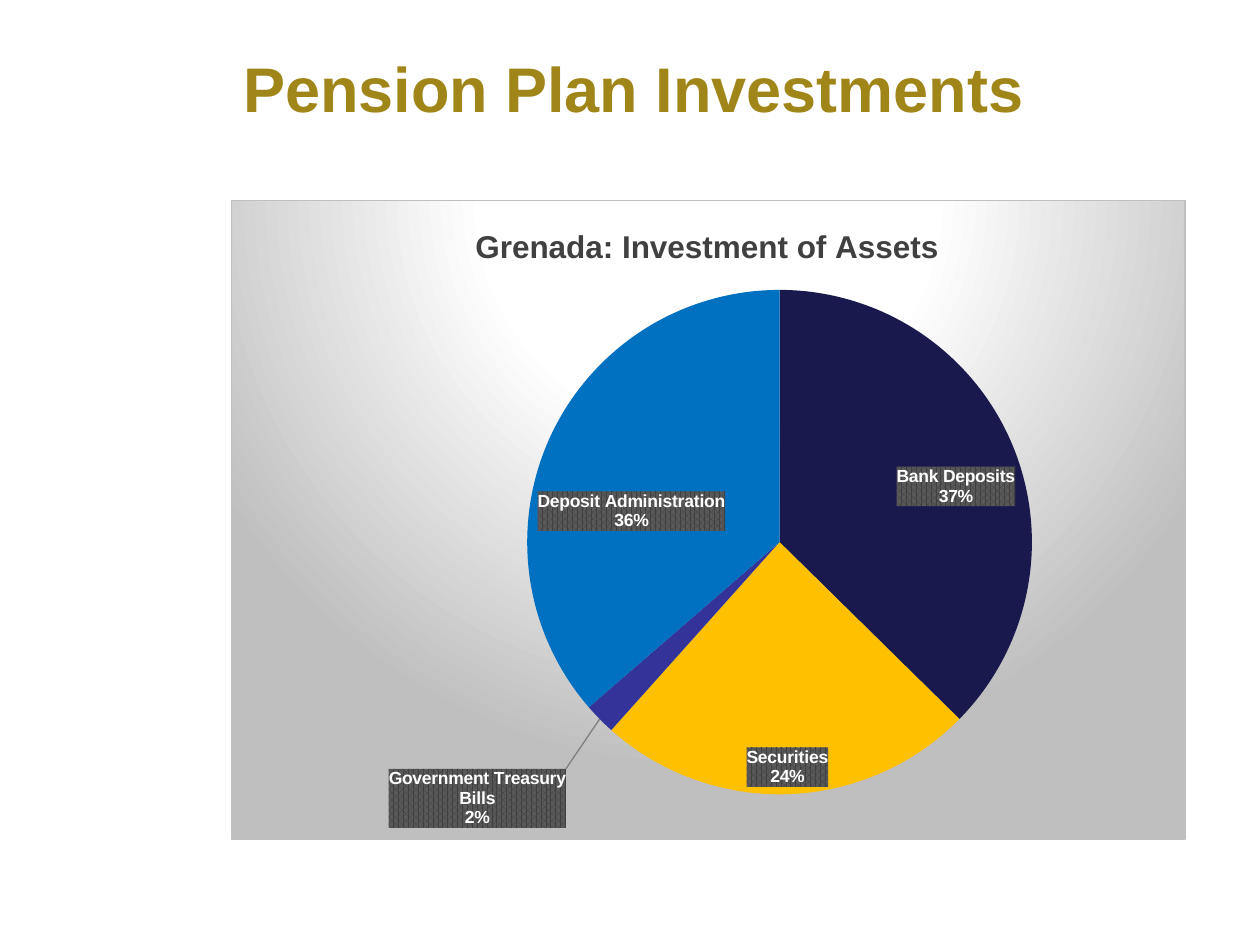
import pptx
import pptx.chart.data
import pptx.dml.color
import pptx.enum.chart
import pptx.enum.text
import pptx.oxml
import pptx.oxml.ns
import pptx.util

Cm, Pt = pptx.util.Cm, pptx.util.Pt
RGBColor = pptx.dml.color.RGBColor
qn = pptx.oxml.ns.qn

# Content
TITLE = "Pension Plan Investments"
CHART_TITLE = "Grenada: Investment of Assets"
GOLD = RGBColor(0xA0, 0x85, 0x18)
DARK_GRAY = RGBColor(0x40, 0x40, 0x40)
BLACK = RGBColor(0, 0, 0)
ASSETS = [
    ("Asset Type", None, RGBColor(0xBB, 0xE0, 0xE3)),
    ("Bank Deposits", 37, RGBColor(0x19, 0x19, 0x4D)),
    ("Securities", 24, RGBColor(0xFF, 0xC0, 0x00)),
    ("Government Treasury Bills", 2, RGBColor(0x33, 0x33, 0x99)),
    ("Equity", 0, RGBColor(0x99, 0x99, 0x99)),
    ("Deposit Administration", 36, RGBColor(0x00, 0x70, 0xC0)),
]
# Moved labels: slice, position, shift as a share of the chart size
MOVED_LABELS = [
    (1, "inEnd", (0.01, 0.03)),
    (3, "outEnd", (-0.03, 0.07)),
    (4, "outEnd", (-0.02, 0)),
    (5, "inEnd", (-0.02, 0.08)),
]
FONT = "Arial"
LEFT, WIDTH = Cm(4.65), Cm(19.25)

NS = pptx.oxml.ns.nsdecls("c", "a")


def layout_xml(x, y, w=None, h=None, edge=True):
    """Manual layout, measured from the chart edge or as a shift."""
    parts = '<c:layoutTarget val="inner"/>' if w else ""
    if edge:
        parts += '<c:xMode val="edge"/><c:yMode val="edge"/>'
    parts += f'<c:x val="{x}"/><c:y val="{y}"/>'
    if w:
        parts += f'<c:w val="{w}"/><c:h val="{h}"/>'
    return f"<c:layout {NS}><c:manualLayout>{parts}</c:manualLayout></c:layout>"


def set_layout(parent, index, xml):
    for old in parent.findall(qn("c:layout")):
        parent.remove(old)
    parent.insert(index, pptx.oxml.parse_xml(xml))


def label_xml(position):
    """Look and content that all slice labels share."""
    shows = [("LegendKey", 0), ("Val", 0), ("CatName", 1), ("SerName", 0),
             ("Percent", 1), ("BubbleSize", 0)]
    flags = "".join(f'<c:show{name} val="{on}"/>' for name, on in shows)
    return f"""<c:numFmt formatCode="0%" sourceLinked="0"/>
<c:spPr><a:pattFill prst="pct75"><a:fgClr><a:srgbClr val="404040"/></a:fgClr>
<a:bgClr><a:srgbClr val="595959"/></a:bgClr></a:pattFill><a:ln><a:noFill/></a:ln></c:spPr>
<c:txPr><a:bodyPr/><a:p><a:pPr><a:defRPr sz="1000" b="1">
<a:solidFill><a:srgbClr val="FFFFFF"/></a:solidFill><a:latin typeface="{FONT}"/>
</a:defRPr></a:pPr><a:endParaRPr lang="en-US"/></a:p></c:txPr>
<c:dLblPos val="{position}"/>{flags}<c:separator>\n</c:separator>"""


prs = pptx.Presentation()
prs.slide_width, prs.slide_height = Cm(25.4), Cm(19.05)
s = prs.slides.add_slide(prs.slide_layouts[5])

# Slide title
title = s.shapes.title
title.left, title.top, title.width, title.height = LEFT, Cm(0.33), WIDTH, Cm(2.84)
tf = title.text_frame
tf.text = TITLE
tf.vertical_anchor = pptx.enum.text.MSO_ANCHOR.MIDDLE
p = tf.paragraphs[0]
p.alignment = pptx.enum.text.PP_ALIGN.LEFT
font = p.runs[0].font
font.name, font.size, font.bold = FONT, Pt(36), True
font.color.rgb = GOLD

# Pie chart
data = pptx.chart.data.CategoryChartData()
data.categories = [name for name, _, _ in ASSETS]
data.add_series("Series 1", [value for _, value, _ in ASSETS])
chart = s.shapes.add_chart(pptx.enum.chart.XL_CHART_TYPE.PIE,
                           LEFT, Cm(4.03), WIDTH, Cm(12.9), data).chart
chart.has_legend = False
chart.font.name, chart.font.size = FONT, Pt(10)
chart.font.color.rgb = BLACK
plot = chart.plots[0]
plot.vary_by_categories = True
for i, (_, _, color) in enumerate(ASSETS):
    fmt = plot.series[0].points[i].format
    fmt.fill.solid()
    fmt.fill.fore_color.rgb = color
    fmt.line.fill.background()

# Chart title
chart.has_title = True
tf = chart.chart_title.text_frame
tf.text = CHART_TITLE
font = tf.paragraphs[0].runs[0].font
font.name, font.size, font.bold = FONT, Pt(18), True
font.color.rgb = DARK_GRAY

# Places of the chart title and the pie
space = chart._chartSpace
set_layout(space.find(".//" + qn("c:title")), 1, layout_xml(0.25, 0.03))
set_layout(space.find(".//" + qn("c:plotArea")), 0,
           layout_xml(0.31, 0.14, 0.53, 0.79))

# Slice labels, the two small slices with leader lines
moved = "".join(
    f'<c:dLbl><c:idx val="{i}"/>{layout_xml(*shift, edge=False)}'
    f'{label_xml(position)}</c:dLbl>' for i, position, shift in MOVED_LABELS)
labels = f"""<c:dLbls {NS}>{moved}{label_xml("inEnd")}
<c:showLeaderLines val="1"/><c:leaderLines><c:spPr><a:ln w="9525"><a:solidFill>
<a:srgbClr val="7F7F7F"/></a:solidFill></a:ln></c:spPr></c:leaderLines></c:dLbls>"""
space.find(".//" + qn("c:cat")).addprevious(pptx.oxml.parse_xml(labels))

# Chart background and border
stops = "".join(f'<a:gs pos="{pos}000"><a:srgbClr val="{color}"/></a:gs>'
                for pos, color in [(0, "FFFFFF"), (39, "FFFFFF"), (100, "BFBFBF")])
background = f"""<c:spPr {NS}><a:gradFill><a:gsLst>{stops}</a:gsLst>
<a:path path="circle"><a:fillToRect l="50000" t="-80000" r="50000" b="180000"/></a:path>
</a:gradFill><a:ln w="9525"><a:solidFill><a:srgbClr val="BFBFBF"/></a:solidFill></a:ln></c:spPr>"""
space.find(qn("c:txPr")).addprevious(pptx.oxml.parse_xml(background))

prs.save("out.pptx")
